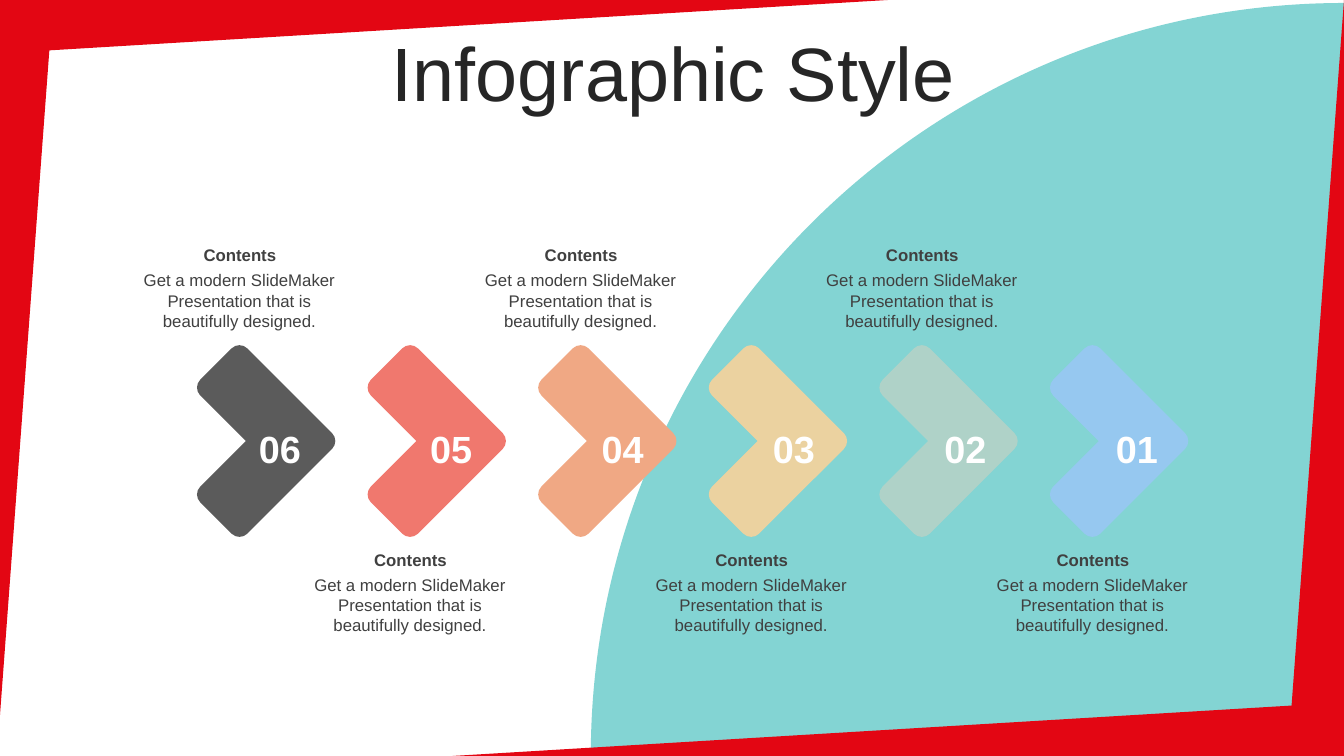
from dataclasses import dataclass
from math import dist

from lxml import etree
from pptx import Presentation
from pptx import util as u
from pptx.dml.color import RGBColor
from pptx.enum import text
from pptx.oxml import ns

RED = RGBColor(0xE3, 0x06, 0x13)
TEAL = RGBColor(0x13, 0xAD, 0xAB)
INK = RGBColor(0x26, 0x26, 0x26)
GREY = RGBColor(0x40, 0x40, 0x40)
WHITE = RGBColor(0xFF, 0xFF, 0xFF)
FONT = "Arial"
BLURB = "Get a modern SlideMaker Presentation that is beautifully designed."
PITCH = 8.46 / 5
NUM_PITCH = 1.7
UPPER, LOWER = 2.43, 5.45
SIDE, INNER = 1.41, 0.75
ROUND, PULL = 0.11, 0.05

Point = tuple[float, float]
Piece = list[Point]


@dataclass
class Step:
    num: str
    fill: RGBColor
    top: float


@dataclass
class Style:
    size: float
    tint: RGBColor
    bold: bool = False


STEPS = [
    Step("06", RGBColor(0x5B, 0x5B, 0x5B), UPPER),
    Step("05", RGBColor(0xF0, 0x78, 0x6E), LOWER),
    Step("04", RGBColor(0xF0, 0xA8, 0x84), UPPER),
    Step("03", RGBColor(0xEB, 0xD2, 0xA0), LOWER),
    Step("02", RGBColor(0xAF, 0xD2, 0xC8), UPPER),
    Step("01", RGBColor(0x96, 0xC8, 0xF0), LOWER),
]
TITLE = Style(54, INK)
HEAD = Style(12, GREY, True)
BODY = Style(12, GREY)
NUMBER = Style(27, WHITE, True)

ARC: list[Piece] = [
    [(13.33, 0.03)],
    [(13.33, 7.5)],
    [(5.86, 7.5)],
    [(5.86, 3.37), (9.2, 0.03), (13.33, 0.03)],
]
NOTCH: Point = (INNER, INNER)
BENDS: list[Point] = [(INNER, 0), (SIDE, 0), (SIDE, SIDE), (0, SIDE), (0, INNER)]
FRAMES: list[list[Piece]] = [
    [[(-0.03, 0)], [(-0.03, 7.5)], [(0.49, 0.5)], [(8.81, 0)]],
    [[(13.33, 7.5)], [(13.33, 0)], [(12.81, 7)], [(4.49, 7.5)]],
]


def toward(start: Point, goal: Point, length: float) -> Point:
    part = length / dist(start, goal)
    return (
        start[0] + (goal[0] - start[0]) * part,
        start[1] + (goal[1] - start[1]) * part,
    )


def arrow() -> list[Piece]:
    ring = [NOTCH, *BENDS, NOTCH]
    pieces: list[Piece] = [[NOTCH]]
    for prior, bend, after in zip(ring, ring[1:], ring[2:]):
        pieces.append([toward(bend, prior, ROUND)])
        pieces.append([
            toward(bend, prior, PULL),
            toward(bend, after, PULL),
            toward(bend, after, ROUND),
        ])
    return pieces


def draw(slide, pieces: list[Piece], fill: RGBColor, left: float = 0, top: float = 0):
    spots = [
        (u.Inches(x + left), u.Inches(y + top)) for piece in pieces for x, y in piece
    ]
    pen = slide.shapes.build_freeform(*spots[0], scale=1.0)
    pen.add_line_segments(spots[1:], close=True)
    shape = pen.convert_to_shape()
    lines = iter(list(shape.element.iter(ns.qn("a:lnTo"))))
    for piece in pieces[1:]:
        group = [next(lines) for _ in piece]
        if len(group) == 3:
            curve = etree.Element(ns.qn("a:cubicBezTo"))
            group[0].addprevious(curve)
            for line in group:
                curve.append(line[0])
                line.getparent().remove(line)
    shape.shadow.inherit = False
    shape.fill.solid()
    shape.fill.fore_color.rgb = fill
    shape.line.fill.background()
    return shape


def write(frame, words: str, style: Style):
    para = frame.paragraphs[0]
    para.alignment = text.PP_ALIGN.CENTER
    run = para.add_run()
    run.text = words
    run.font.name = FONT
    run.font.size = u.Pt(style.size)
    run.font.bold = style.bold
    run.font.color.rgb = style.tint
    return para


def label(slide, box: tuple[float, float, float, float], words: str, style: Style) -> None:
    frame = slide.shapes.add_textbox(*map(u.Inches, box)).text_frame
    frame.word_wrap = True
    frame.auto_size = text.MSO_AUTO_SIZE.SHAPE_TO_FIT_TEXT
    frame.margin_left = frame.margin_right = frame.margin_top = frame.margin_bottom = 0
    write(frame, words, style)


def main() -> None:
    deck = Presentation()
    deck.slide_width, deck.slide_height = u.Inches(13.33), u.Inches(7.5)
    slide = deck.slides.add_slide(deck.slide_layouts[5])

    title = slide.shapes.title
    title.left, title.top = u.Inches(0.35), u.Inches(0.37)
    title.width, title.height = u.Inches(12.66), u.Inches(0.79)
    frame = title.text_frame
    frame.auto_size = text.MSO_AUTO_SIZE.NONE
    frame.vertical_anchor = text.MSO_ANCHOR.MIDDLE
    para = write(frame, "Infographic Style", TITLE)
    para.line_spacing = 0.9
    para.space_before = u.Pt(10)

    arc = draw(slide, ARC, TEAL)
    shade = arc.element.spPr.find(ns.qn("a:solidFill"))[0]
    etree.SubElement(shade, ns.qn("a:alpha"), val="52000")
    title.element.addprevious(arc.element)

    for i, step in enumerate(STEPS):
        shift = i * PITCH
        shape = draw(slide, arrow(), step.fill, 1.67 + shift, 3.67)
        shape.rotation = 315
        label(slide, (1.27 + shift, step.top + 0.25, 2.21, 0.61), BLURB, BODY)
        label(slide, (1.28 + shift, step.top, 2.2, 0.2), "Contents", HEAD)
        label(slide, (2.45 + i * NUM_PITCH, 4.22, 0.65, 0.45), step.num, NUMBER)

    for pieces in FRAMES:
        draw(slide, pieces, RED)

    deck.save("out.pptx")


if __name__ == "__main__":
    main()
